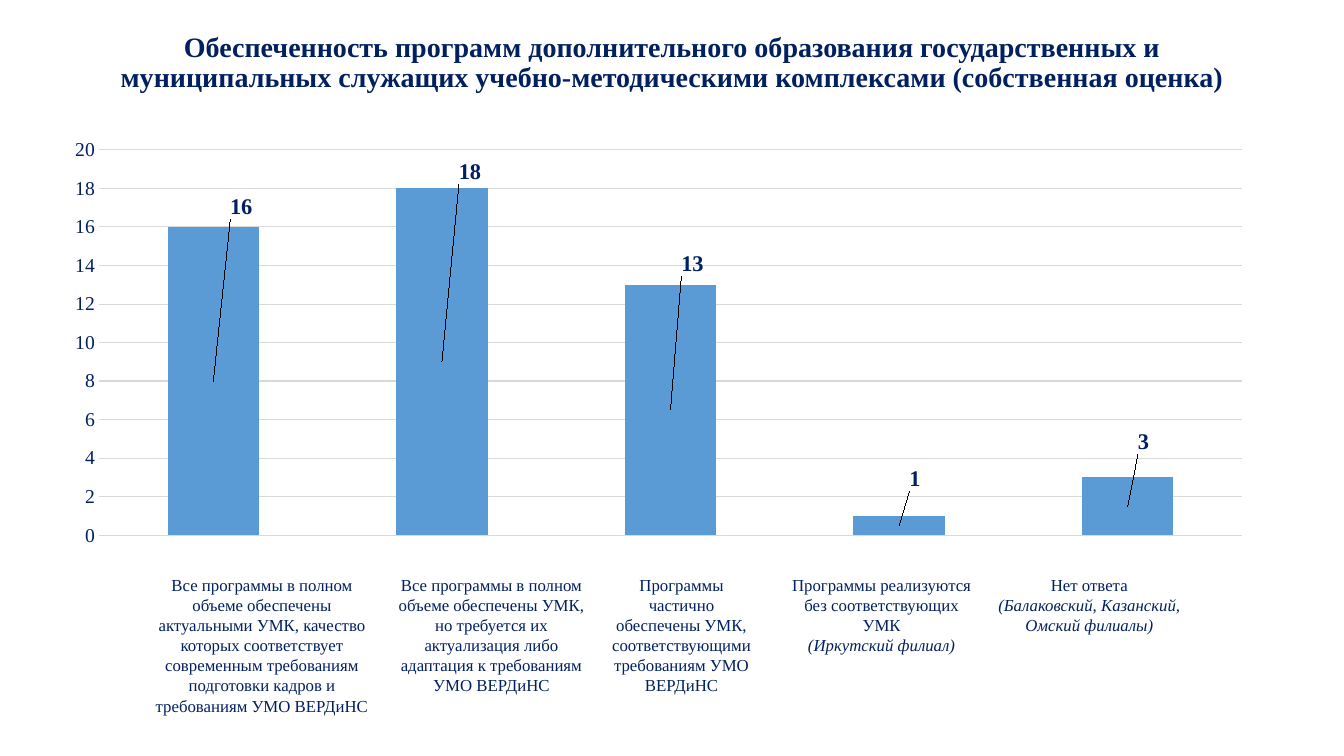
from dataclasses import dataclass

import lxml.etree
import pptx
import pptx.chart.chart
import pptx.chart.data
import pptx.dml.color
import pptx.enum.chart
import pptx.enum.text
import pptx.oxml.ns
import pptx.slide
import pptx.text.text
import pptx.util

NAVY = pptx.dml.color.RGBColor(0x00, 0x20, 0x60)
BLUE = pptx.dml.color.RGBColor(0x5B, 0x9B, 0xD5)
GRID = pptx.dml.color.RGBColor(0xD9, 0xD9, 0xD9)
FONT = "Times New Roman"

SLIDE_W = pptx.util.Inches(13.33)
SLIDE_H = pptx.util.Inches(7.5)

TITLE = ("Обеспеченность программ дополнительного образования государственных и "
         "муниципальных служащих учебно-методическими комплексами (собственная оценка)")
CAPTION_TOP = 75.33
CAPTION_PADDING = 1.47
CAPTION_LINE = 2.67
PLOT_AREA = {"x": 4, "y": 4.7, "w": 94, "h": 90.8}

C15 = "http://schemas.microsoft.com/office/drawing/2012/chart"
C15_EXTENSION = "{CE6537A1-D6FC-4f65-9D91-7224C49458BB}"


@dataclass(frozen=True)
class Answer:
    """One bar with its caption; the label shift is a percentage of the chart's size."""
    value: int
    label_dx: float
    label_dy: float
    left: float
    width: float
    lines: int
    text: str
    note: str = ""


ANSWERS = [
    Answer(16, 2.3, -41, 10.35, 18.3, 7,
           "Все программы в полном объеме обеспечены актуальными УМК, качество которых "
           "соответствует современным требованиям подготовки кадров и требованиям УМО ВЕРДиНС"),
    Answer(18, 2.3, -44.7, 28.73, 15.68, 6,
           "Все программы в полном объеме обеспечены УМК, но требуется их актуализация "
           "либо адаптация к требованиям УМО ВЕРДиНС"),
    Answer(13, 1.8, -34.4, 44.56, 12.3, 6,
           "Программы частично обеспечены УМК, соответствующими требованиям УМО ВЕРДиНС"),
    Answer(1, 1.3, -11, 57.76, 15.68, 4,
           "Программы реализуются без соответствующих УМК", "(Иркутский филиал)"),
    Answer(3, 1.3, -15.2, 73.44, 15.23, 3,
           "Нет ответа", "(Балаковский, Казанский, Омский филиалы)"),
]


def box(left: float, top: float, width: float, height: float) -> tuple[int, int, int, int]:
    """Turn percentages of the slide's size into lengths."""
    return (int(SLIDE_W * left / 100), int(SLIDE_H * top / 100),
            int(SLIDE_W * width / 100), int(SLIDE_H * height / 100))


def style(font: pptx.text.text.Font, size: float, bold: bool = False, italic: bool = False) -> None:
    font.name = FONT
    font.size = pptx.util.Pt(size)
    font.bold = bold
    font.italic = italic
    font.color.rgb = NAVY


def manual_layout(**percents: float) -> lxml.etree._Element:
    """Build a c:layout; a width among the values makes it an inner plot area."""
    qn = pptx.oxml.ns.qn
    layout = lxml.etree.Element(qn("c:layout"))
    manual = lxml.etree.SubElement(layout, qn("c:manualLayout"))
    if "w" in percents:
        for tag, mode in (("layoutTarget", "inner"), ("xMode", "edge"), ("yMode", "edge")):
            lxml.etree.SubElement(manual, qn(f"c:{tag}"), val=mode)
    for tag, percent in percents.items():
        lxml.etree.SubElement(manual, qn(f"c:{tag}"), val=f"{percent / 100:.3f}")
    return layout


def add_title(slide: pptx.slide.Slide) -> None:
    sp = slide.shapes.title
    sp.left, sp.top, sp.width, sp.height = box(6.83, 4.4, 86.35, 11.6)
    tf = sp.text_frame
    tf.text = TITLE
    tf.word_wrap = True
    tf.auto_size = pptx.enum.text.MSO_AUTO_SIZE.NONE
    tf.vertical_anchor = pptx.enum.text.MSO_ANCHOR.TOP
    tf.margin_top = 0
    p = tf.paragraphs[0]
    p.alignment = pptx.enum.text.PP_ALIGN.CENTER
    p.line_spacing = 0.9
    style(p.runs[0].font, 20, bold=True)


def hide_leader_lines(chart: pptx.chart.chart.Chart) -> None:
    qn = pptx.oxml.ns.qn
    labels = chart.element.xpath(".//c:ser/c:dLbls")[0]
    for old in labels.xpath("./c:showLeaderLines"):
        labels.remove(old)
    extensions = lxml.etree.SubElement(labels, qn("c:extLst"))
    ext = lxml.etree.SubElement(extensions, qn("c:ext"), nsmap={"c15": C15}, uri=C15_EXTENSION)
    lxml.etree.SubElement(ext, f"{{{C15}}}showLeaderLines", val="0")


def place_labels(chart: pptx.chart.chart.Chart) -> None:
    """Show each value above its bar, moved from the bar's middle."""
    points = chart.plots[0].series[0].points
    for i in range(len(ANSWERS)):
        style(points[i].data_label.font, 16, bold=True)
    for label, answer in zip(chart.element.xpath(".//c:dLbl"), ANSWERS):
        label.insert(1, manual_layout(x=answer.label_dx, y=answer.label_dy))
    hide_leader_lines(chart)


def add_bars(slide: pptx.slide.Slide) -> None:
    data = pptx.chart.data.CategoryChartData()
    data.categories = [str(i + 1) for i in range(len(ANSWERS))]
    data.add_series("Series 1", [a.value for a in ANSWERS])
    chart = slide.shapes.add_chart(pptx.enum.chart.XL_CHART_TYPE.COLUMN_STACKED,
                                   *box(3.75, 17.2, 90.47, 56.13), data).chart
    chart.has_legend = False
    chart.has_title = False
    style(chart.font, 14)

    plot = chart.plots[0]
    plot.gap_width = 150
    plot.overlap = 100
    plot.vary_by_categories = False
    fill = plot.series[0].format.fill
    fill.solid()
    fill.fore_color.rgb = BLUE
    place_labels(chart)

    chart.category_axis.visible = False
    axis = chart.value_axis
    axis.minimum_scale = 0
    axis.maximum_scale = 20
    axis.major_unit = 2
    axis.major_tick_mark = pptx.enum.chart.XL_TICK_MARK.NONE
    axis.format.line.fill.background()
    style(axis.tick_labels.font, 14)
    axis.has_major_gridlines = True
    line = axis.major_gridlines.format.line
    line.color.rgb = GRID
    line.width = pptx.util.Pt(0.75)

    area = chart.element.xpath(".//c:plotArea")[0]
    for old in area.xpath("./c:layout"):
        area.remove(old)
    area.insert(0, manual_layout(**PLOT_AREA))


def add_caption(slide: pptx.slide.Slide, answer: Answer) -> None:
    height = CAPTION_PADDING + CAPTION_LINE * answer.lines
    sp = slide.shapes.add_textbox(*box(answer.left, CAPTION_TOP, answer.width, height))
    tf = sp.text_frame
    tf.word_wrap = True
    tf.auto_size = pptx.enum.text.MSO_AUTO_SIZE.SHAPE_TO_FIT_TEXT
    tf.text = answer.text
    if answer.note:
        tf.add_paragraph().text = answer.note
    for i, p in enumerate(tf.paragraphs):
        p.alignment = pptx.enum.text.PP_ALIGN.CENTER
        style(p.runs[0].font, 12, italic=i > 0)


def main() -> None:
    prs = pptx.Presentation()
    prs.slide_width = SLIDE_W
    prs.slide_height = SLIDE_H
    slide = prs.slides.add_slide(prs.slide_layouts.get_by_name("Title Only"))
    add_title(slide)
    add_bars(slide)
    for answer in ANSWERS:
        add_caption(slide, answer)
    prs.save("out.pptx")


if __name__ == "__main__":
    main()
